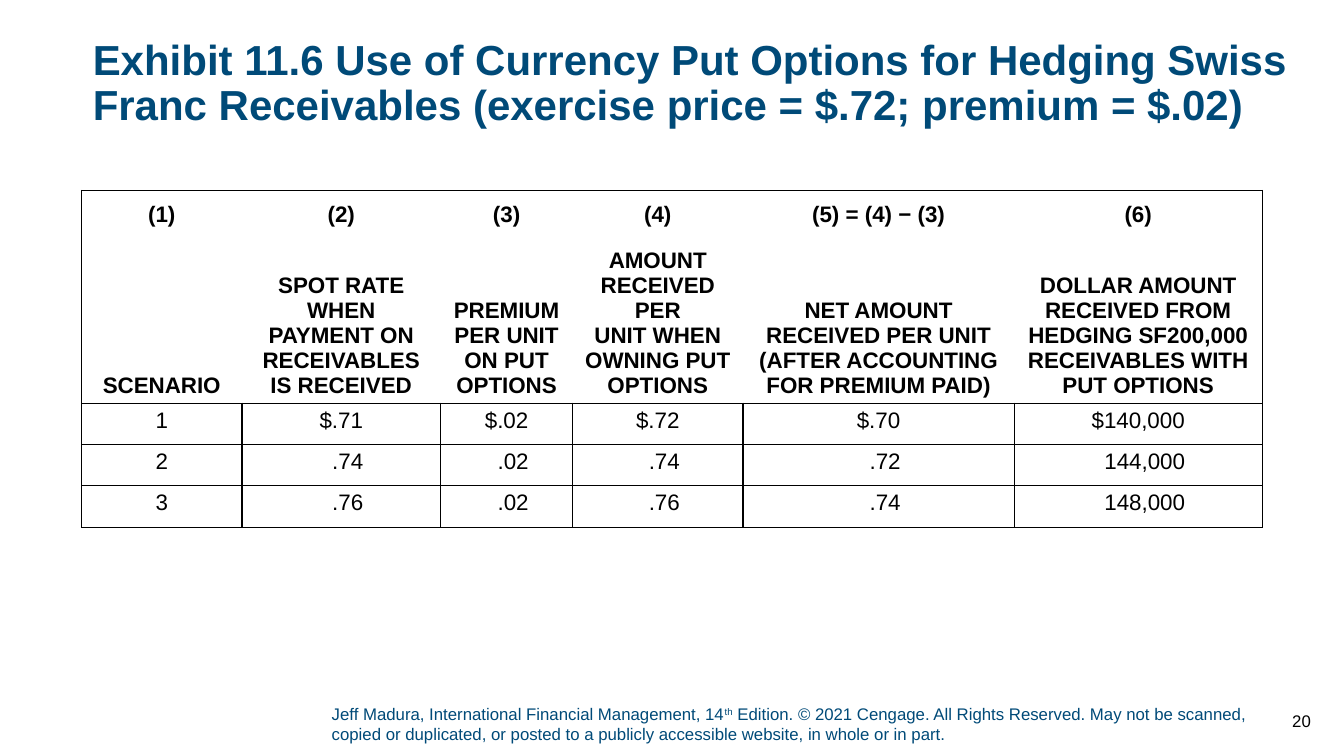
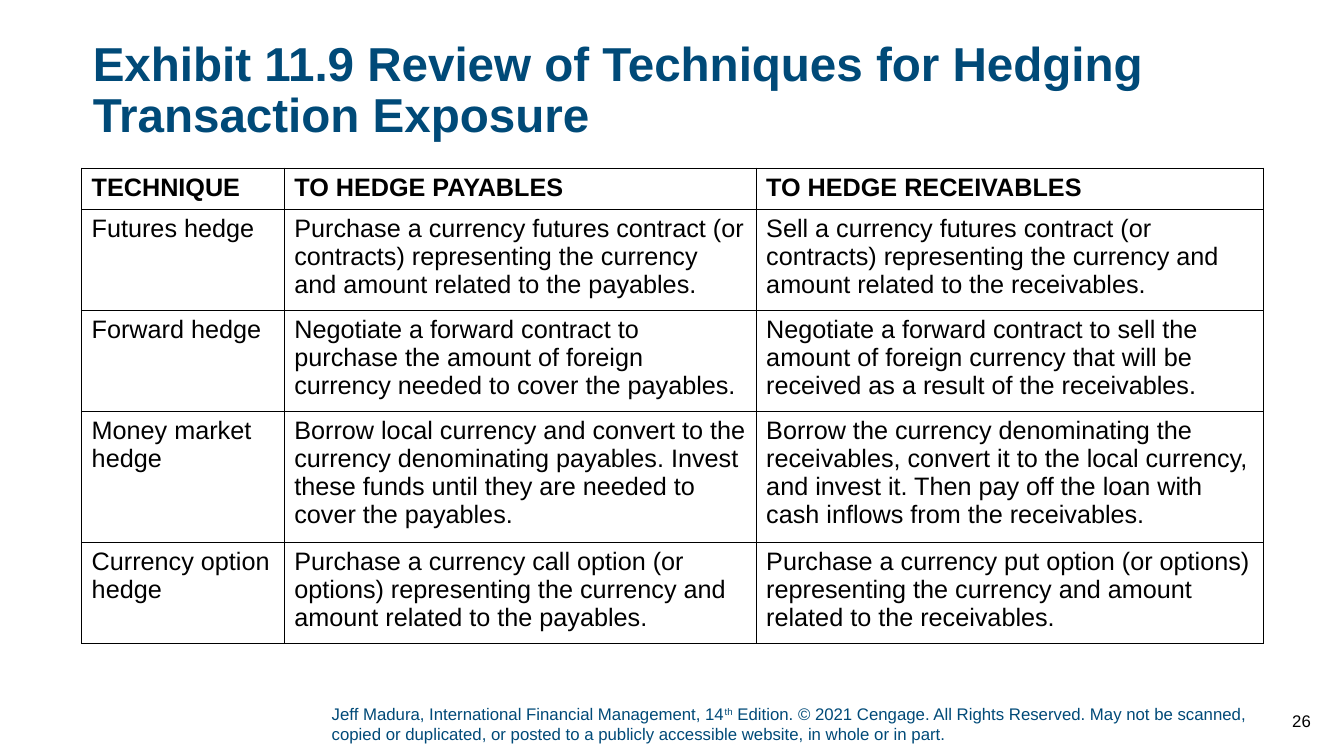
import dataclasses

import lxml.etree
import pptx
import pptx.dml.color
import pptx.enum.text
import pptx.oxml.ns
import pptx.util

Inches = pptx.util.Inches
ALIGN = pptx.enum.text.PP_ALIGN
ANCHOR = pptx.enum.text.MSO_ANCHOR


@dataclasses.dataclass(frozen=True)
class Theme:
    """Colours, type sizes and line widths shared by the slides."""

    font: str = "Arial"
    blue: str = "004A78"
    black: str = "000000"
    footer_size: int = 12
    border: float = 1


THEME = Theme()

FOOTER_PARTS = (
    "Jeff Madura, International Financial Management, 14",
    "th",
    " Edition. © 2021 Cengage. All Rights Reserved. May not be scanned, copied or "
    "duplicated, or posted to a publicly accessible website, in whole or in part.",
)

OPTION_HEADINGS = (
    ("(1)", "(2)", "(3)", "(4)", "(5) = (4) − (3)", "(6)"),
    (
        "SCENARIO",
        "SPOT RATE\nWHEN\nPAYMENT ON\nRECEIVABLES\nIS RECEIVED",
        "PREMIUM\nPER UNIT\nON PUT\nOPTIONS",
        "AMOUNT\nRECEIVED PER\nUNIT WHEN\nOWNING PUT\nOPTIONS",
        "NET AMOUNT\nRECEIVED PER UNIT\n(AFTER ACCOUNTING\nFOR PREMIUM PAID)",
        "DOLLAR AMOUNT RECEIVED FROM HEDGING SF200,000\n"
        "RECEIVABLES WITH PUT OPTIONS",
    ),
)

OPTION_SCENARIOS = (
    ("1", "$.71", "$.02", "$.72", "$.70", "$140,000"),
    ("2", ".74", ".02", ".74", ".72", "144,000"),
    ("3", ".76", ".02", ".76", ".74", "148,000"),
)

TECHNIQUES = (
    ("TECHNIQUE", "TO HEDGE PAYABLES", "TO HEDGE RECEIVABLES"),
    (
        "Futures hedge",
        "Purchase a currency futures contract (or contracts) representing the "
        "currency and amount related to the payables.",
        "Sell a currency futures contract (or contracts) representing the "
        "currency and amount related to the receivables.",
    ),
    (
        "Forward hedge",
        "Negotiate a forward contract to purchase the amount of foreign currency "
        "needed to cover the payables.",
        "Negotiate a forward contract to sell the amount of foreign currency that "
        "will be received as a result of the receivables.",
    ),
    (
        "Money market hedge",
        "Borrow local currency and convert to the currency denominating payables. "
        "Invest these funds until they are needed to cover the payables.",
        "Borrow the currency denominating the receivables, convert it to the local "
        "currency, and invest it. Then pay off the loan with cash inflows from the "
        "receivables.",
    ),
    (
        "Currency option hedge",
        "Purchase a currency call option (or options) representing the currency "
        "and amount related to the payables.",
        "Purchase a currency put option (or options) representing the currency "
        "and amount related to the receivables.",
    ),
)


def style_text(frame, size, color, bold=False, align=ALIGN.LEFT):
    """Format every run of a text frame."""
    for para in frame.paragraphs:
        para.alignment = align
        for span in para.runs:
            span.font.name = THEME.font
            span.font.size = pptx.util.Pt(size)
            span.font.bold = bold
            span.font.color.rgb = pptx.dml.color.RGBColor.from_string(color)


def set_margins(frame, bottom=0):
    """Remove the insets of a text frame, keeping the given bottom one."""
    frame.margin_left = frame.margin_top = frame.margin_right = 0
    frame.margin_bottom = Inches(bottom)


def add_box(page, box, anchor):
    """Add a wrapping text box and return its frame."""
    frame = page.shapes.add_textbox(*map(Inches, box)).text_frame
    frame.word_wrap = True
    frame.vertical_anchor = anchor
    return frame


def place_title(page, text, box, size):
    """Move the title placeholder into the box and format it."""
    title = page.shapes.title
    title.left, title.top, title.width, title.height = map(Inches, box)
    frame = title.text_frame
    frame.text = text
    frame.word_wrap = True
    frame.auto_size = pptx.enum.text.MSO_AUTO_SIZE.NONE
    frame.vertical_anchor = ANCHOR.TOP
    set_margins(frame)
    frame.paragraphs[0].line_spacing = 0.9
    style_text(frame, size, THEME.blue, bold=True)


def place_footer(page, box):
    """Write the copyright line in the box."""
    frame = add_box(page, box, ANCHOR.BOTTOM)
    set_margins(frame, bottom=0.05)
    para = frame.paragraphs[0]
    for part in FOOTER_PARTS:
        para.add_run().text = part
    style_text(frame, THEME.footer_size, THEME.blue)
    para.runs[1].font._element.set("baseline", "30000")


def place_number(page, number, box):
    """Write the page number in the box."""
    frame = add_box(page, box, ANCHOR.MIDDLE)
    frame.text = str(number)
    style_text(frame, THEME.footer_size, THEME.black, align=ALIGN.RIGHT)


def set_borders(cell, sides):
    """Draw the named sides of a cell and hide the others."""
    properties = cell._tc.get_or_add_tcPr()
    name = pptx.oxml.ns.qn
    for position, side in enumerate("LRTB"):
        line = lxml.etree.Element(name(f"a:ln{side}"))
        line.set("w", str(pptx.util.Pt(THEME.border)))
        if side in sides:
            fill = lxml.etree.SubElement(line, name("a:solidFill"))
            lxml.etree.SubElement(fill, name("a:srgbClr")).set("val", THEME.black)
        else:
            lxml.etree.SubElement(line, name("a:noFill"))
        properties.insert(position, line)


def add_grid(page, origin, widths, heights, rows, size, headings=1, align=ALIGN.LEFT):
    """Add a ruled table with bold heading rows and return it."""
    box = (*origin, sum(widths), sum(heights))
    shape = page.shapes.add_table(len(rows), len(widths), *map(Inches, box))
    table = shape.table
    table.first_row = table.horz_banding = False
    for column, width in zip(table.columns, widths):
        column.width = Inches(width)
    for row_index, (row, height) in enumerate(zip(rows, heights)):
        table.rows[row_index].height = Inches(height)
        for column_index, text in enumerate(row):
            cell = table.cell(row_index, column_index)
            cell.text_frame.text = text
            cell.fill.background()
            style_text(cell.text_frame, size, THEME.black, row_index < headings, align)
            if headings == 1 or row_index >= headings:
                set_borders(cell, "LRTB")
    return table


def open_heading(table, headings):
    """Frame the heading rows as one block with its text at the bottom."""
    last_column = len(table.columns) - 1
    for row_index in range(headings):
        for column_index in range(last_column + 1):
            cell = table.cell(row_index, column_index)
            cell.vertical_anchor = ANCHOR.BOTTOM
            sides = "T" if row_index == 0 else ""
            sides += "B" if row_index == headings - 1 else ""
            sides += "L" if column_index == 0 else ""
            sides += "R" if column_index == last_column else ""
            set_borders(cell, sides)


def indent_plain_values(table, first_row, indent):
    """Indent the values that stand below a dollar sign."""
    for row_index in range(first_row, len(table.rows)):
        for column_index in range(1, len(table.columns)):
            para = table.cell(row_index, column_index).text_frame.paragraphs[0]
            properties = para._p.get_or_add_pPr()
            properties.set("marL", "0")
            properties.set("indent", str(Inches(indent)))


def add_page(deck, title, title_box, title_size, number):
    """Add a title-only slide with its footer and page number."""
    page = deck.slides.add_slide(deck.slide_layouts[5])
    place_footer(page, (3.29, 6.98, 9.24, 0.45))
    place_title(page, title, title_box, title_size)
    place_number(page, number, (12.56, 6.95, 0.54, 0.41))
    return page


def build_put_options(deck):
    """Build the slide on hedging receivables with put options."""
    page = add_page(
        deck,
        "Exhibit 11.6 Use of Currency Put Options for Hedging Swiss Franc "
        "Receivables (exercise price = $.72; premium = $.02)",
        (0.92, 0.39, 12.18, 1.04), 30, 20,
    )
    headings = len(OPTION_HEADINGS)
    table = add_grid(
        page, (0.81, 1.89), (1.59, 1.97, 1.31, 1.69, 2.69, 2.46),
        (0.41, 1.59, 0.41, 0.41, 0.41), OPTION_HEADINGS + OPTION_SCENARIOS,
        16, headings, ALIGN.CENTER,
    )
    open_heading(table, headings)
    indent_plain_values(table, headings + 1, 0.13)


def build_techniques(deck):
    """Build the slide that reviews the hedging techniques."""
    page = add_page(
        deck,
        "Exhibit 11.9 Review of Techniques for Hedging Transaction Exposure",
        (0.92, 0.4, 11.5, 1.05), 34, 26,
    )
    add_grid(
        page, (0.81, 1.67), (2.01, 4.68, 5.03),
        (0.41, 0.94, 0.94, 1.22, 0.94), TECHNIQUES, 18,
    )


def main():
    """Build and save the deck."""
    deck = pptx.Presentation()
    deck.slide_width, deck.slide_height = Inches(13.33), Inches(7.5)
    build_put_options(deck)
    build_techniques(deck)
    deck.save("out.pptx")


if __name__ == "__main__":
    main()
